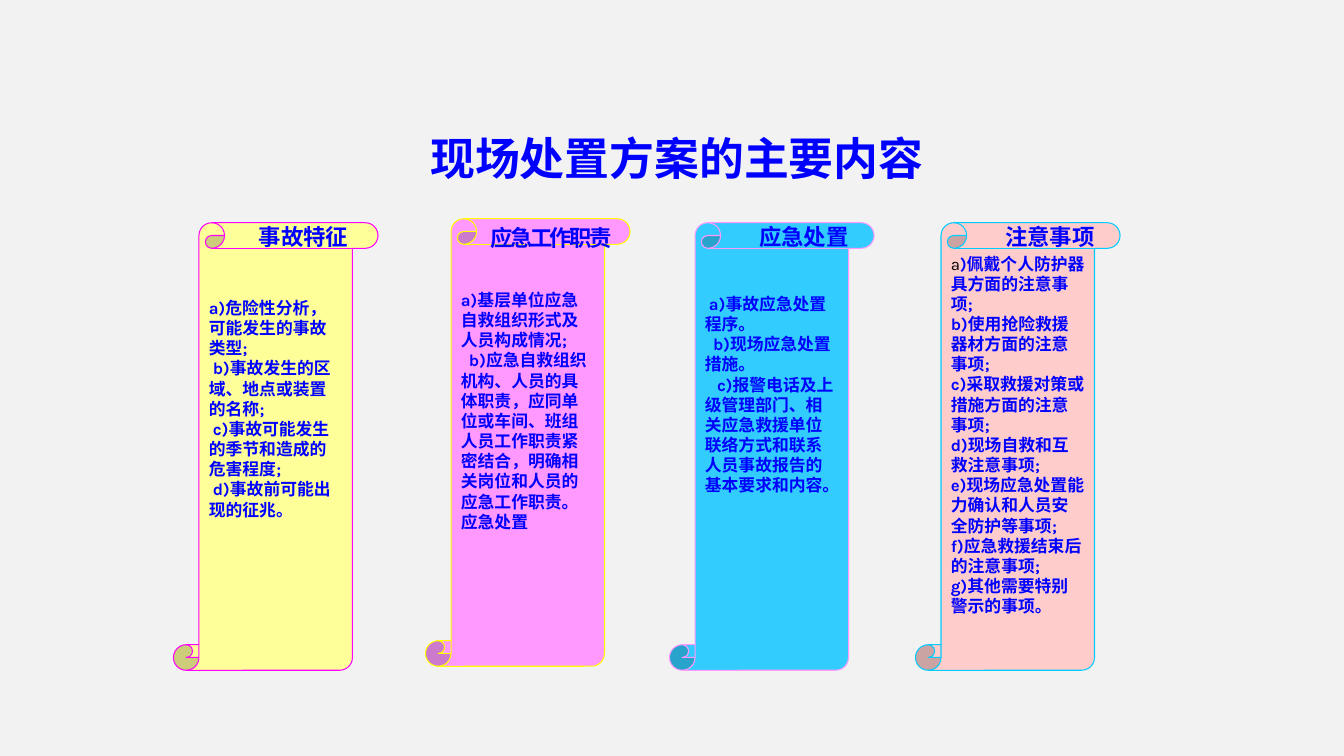
from lxml import etree
from pptx import Presentation
from pptx.dml.color import RGBColor
from pptx.enum.shapes import MSO_SHAPE
from pptx.enum.text import MSO_ANCHOR, PP_ALIGN
from pptx.oxml.ns import qn
from pptx.util import Inches, Pt

SCROLL = MSO_SHAPE.VERTICAL_SCROLL
TOP, LEFT = MSO_ANCHOR.TOP, PP_ALIGN.LEFT

GREY = RGBColor(0xF2, 0xF2, 0xF2)
BLUE = RGBColor(0x00, 0x00, 0xFF)
BLACK = RGBColor(0x00, 0x00, 0x00)
YELLOW = RGBColor(0xFF, 0xFF, 0x00)
PALE_YELLOW = RGBColor(0xFF, 0xFF, 0x99)
MAGENTA = RGBColor(0xFF, 0x00, 0xFF)
PINK = RGBColor(0xFF, 0x99, 0xFF)
ROSE = RGBColor(0xFF, 0xCC, 0xCC)
SKY = RGBColor(0x33, 0xCC, 0xFF)
CYAN = RGBColor(0x00, 0xCC, 0xFF)

BODY = {"name": "Karla", "size": Pt(12), "bold": True}
HEADING = {"name": "Karla", "size": Pt(16), "bold": True}
TITLE = {"name": "Karla", "size": Pt(32), "bold": True}
INDENT_STEP = 0.04


class Deck:
    def __init__(self):
        self.prs = Presentation()
        self.prs.slide_width, self.prs.slide_height = Inches(13.33), Inches(7.5)
        self.s = self.prs.slides.add_slide(self.prs.slide_layouts[6])
        fill = self.s.background.fill
        fill.solid()
        fill.fore_color.rgb = GREY

    def run(self, p, text, style, color=BLUE, spacing=None):
        r = p.add_run()
        r.text = text
        for key, value in style.items():
            setattr(r.font, key, value)
        r.font.color.rgb = color
        rPr = r.font._element
        etree.SubElement(rPr, qn("a:ea")).set("typeface", style["name"])
        if spacing is not None:
            rPr.set("spc", str(spacing))
        return r

    def text(self, x, y, w, h, text, style, wrap=True, spacing=None):
        tf = self.s.shapes.add_textbox(Inches(x), Inches(y), Inches(w), Inches(h)).text_frame
        tf.word_wrap = wrap
        self.run(tf.paragraphs[0], text, style, spacing=spacing)

    def scroll(self, x, y, fill, line, gap, items, dark_first):
        """Scroll whose text starts gap inches lower; items are (indent steps, text)."""
        sp = self.s.shapes.add_shape(SCROLL, Inches(x), Inches(y), Inches(2.03), Inches(4.44))
        sp.shadow.inherit = False
        sp.fill.solid()
        sp.fill.fore_color.rgb = fill
        sp.line.color.rgb = line
        sp.line.width = Pt(0.75)
        tf = sp.text_frame
        tf.word_wrap = True
        tf.vertical_anchor = TOP
        tf.margin_top = Inches(0.05 + gap)
        for i, (steps, text) in enumerate(items):
            p = tf.paragraphs[0] if i == 0 else tf.add_paragraph()
            p.alignment = LEFT
            if steps:
                p._p.get_or_add_pPr().set("indent", str(Inches(steps * INDENT_STEP)))
            if i == 0 and dark_first:
                self.run(p, text[0], {**BODY, "bold": False}, BLACK)
                text = text[1:]
            self.run(p, text, BODY)


# Each column: scroll position, colours, text gap, items, then its heading
COLUMNS = [
    {"scroll": (1.72, 2.21, PALE_YELLOW, MAGENTA, 0.44, [
        (0, "a)危险性分析，可能发生的事故类型;"),
        (1, "b)事故发生的区域、地点或装置的名称;"),
        (1, "c)事故可能发生的季节和造成的危害程度;"),
        (1, "d)事故前可能出现的征兆。")], False),
     "heading": (2.47, 2.16, 1.22, 0.37, "事故特征")},
    {"scroll": (4.22, 2.17, PINK, YELLOW, 0.4, [
        (0, "a)基层单位应急自救组织形式及人员构成情况;"),
        (2, "b)应急自救组织机构、人员的具体职责，应同单位或车间、班组人员工作职责紧密结合，"
            "明确相关岗位和人员的应急工作职责。"),
        (0, "应急处置")], False),
     "heading": (4.77, 2.17, 1.89, 0.37, "应急工作职责"), "spacing": -190},
    {"scroll": (6.64, 2.21, SKY, PINK, 0.4, [
        (1, "a)事故应急处置程序。"),
        (2, "b)现场应急处置措施。"),
        (3, "c)报警电话及上级管理部门、相关应急救援单位联络方式和联系人员事故报告的基本要求和内容。")], False),
     "heading": (7.43, 2.16, 1.22, 0.37, "应急处置")},
    {"scroll": (9.08, 2.21, ROSE, CYAN, 0, [
        (0, "a)佩戴个人防护器具方面的注意事项;"),
        (0, "b)使用抢险救援器材方面的注意事项;"),
        (0, "c)采取救援对策或措施方面的注意事项;"),
        (0, "d)现场自救和互救注意事项;"),
        (0, "e)现场应急处置能力确认和人员安全防护等事项;"),
        (0, "f)应急救援结束后的注意事项;"),
        (0, "g)其他需要特别警示的事项。")], True),
     "heading": (9.87, 2.16, 1.22, 0.37, "注意事项")},
]


def main():
    deck = Deck()
    # Scrolls with their headings
    for column in COLUMNS:
        deck.scroll(*column["scroll"])
        deck.text(*column["heading"], HEADING, spacing=column.get("spacing"))
    # Title
    deck.text(4.17, 1.25, 5.14, 0.64, "现场处置方案的主要内容", TITLE, wrap=False)
    deck.prs.save("out.pptx")


if __name__ == "__main__":
    main()
